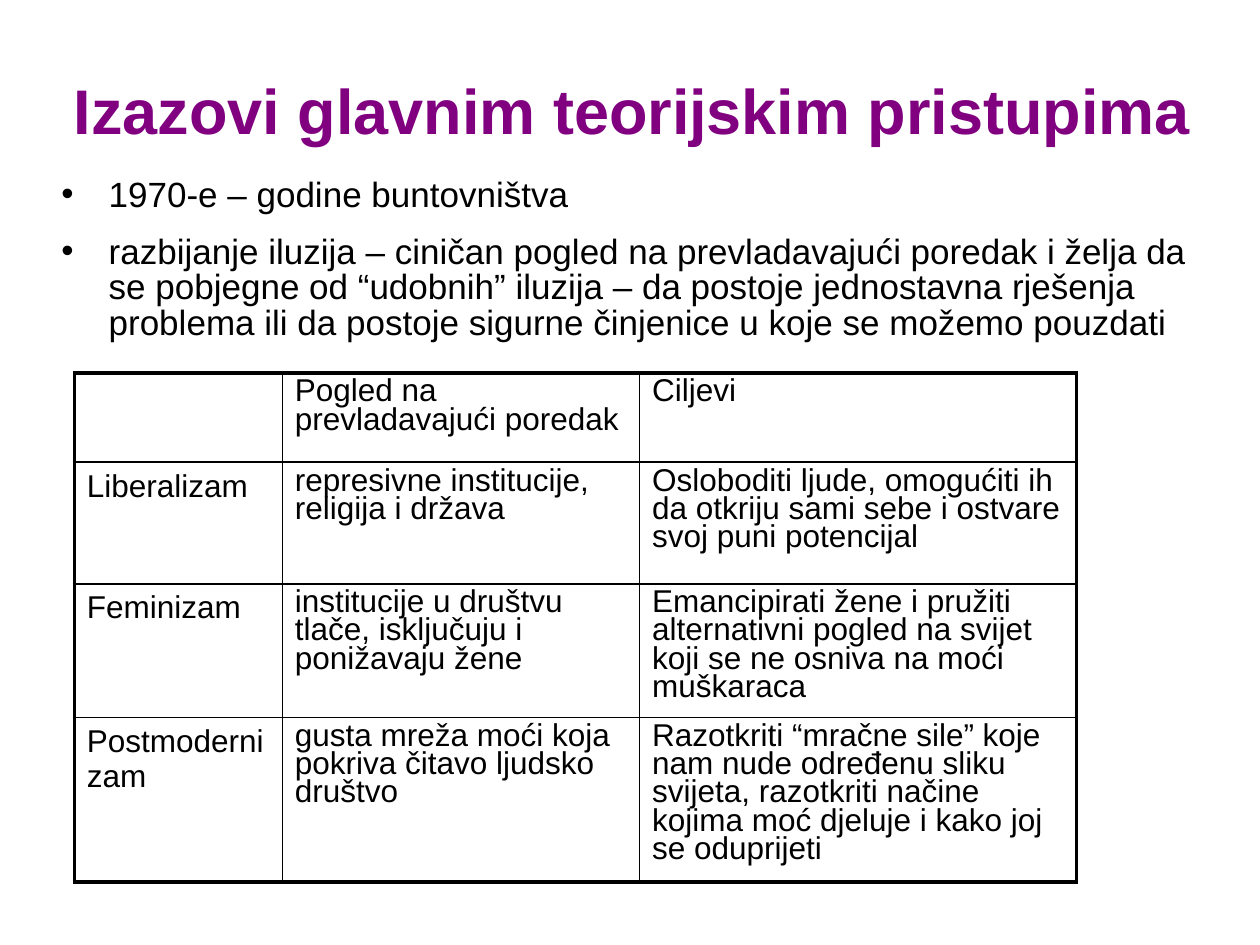
from lxml import etree
from pptx import Presentation
from pptx.dml.color import RGBColor
from pptx.enum.text import MSO_AUTO_SIZE, PP_ALIGN
from pptx.oxml.ns import qn
from pptx.util import Pt

CENTER = PP_ALIGN.CENTER
GROW = MSO_AUTO_SIZE.SHAPE_TO_FIT_TEXT
FONT = "Arial"
COLORS = {"title": "800080", "text": "000000", "border": "000000"}
THIN, THICK = 1, 2.25
INDENT = 27

TITLE = "Izazovi glavnim teorijskim pristupima"
BULLETS = [
    "1970-e – godine buntovništva",
    "razbijanje iluzija – ciničan pogled na prevladavajući poredak i želja da "
    "se pobjegne od “udobnih” iluzija – da postoje jednostavna rješenja "
    "problema ili da postoje sigurne činjenice u koje se možemo pouzdati",
]
COLUMN_WIDTHS = [118.8, 204.2, 249.6]
ROW_HEIGHTS = [51, 69.5, 76, 94]
ROWS = [
    ["", "Pogled na prevladavajući poredak", "Ciljevi"],
    ["Liberalizam", "represivne institucije, religija i država",
     "Osloboditi ljude, omogućiti ih da otkriju sami sebe i ostvare svoj puni potencijal"],
    ["Feminizam", "institucije u društvu tlače, isključuju i ponižavaju žene",
     "Emancipirati žene i pružiti alternativni pogled na svijet koji se ne osniva "
     "na moći muškaraca"],
    ["Postmodernizam", "gusta mreža moći koja pokriva čitavo ljudsko društvo",
     "Razotkriti “mračne sile” koje nam nude određenu sliku svijeta, razotkriti "
     "načine kojima moć djeluje i kako joj se oduprijeti"],
]


def style_font(font, size, color, bold=False):
    font.name = FONT
    font.size = Pt(size)
    font.bold = bold
    font.color.rgb = RGBColor.from_string(COLORS[color])


def format_paragraph(para, size, color, after, bold=False, bullet=False):
    properties = para._p.get_or_add_pPr()
    properties.set("marL", str(Pt(INDENT)))
    properties.set("indent", str(-Pt(INDENT)))
    para.line_spacing = 0.85
    para.space_after = Pt(after)
    if bullet:
        etree.SubElement(properties, qn("a:buFont"), typeface=FONT)
        etree.SubElement(properties, qn("a:buChar"), char="•")
    for span in para.runs:
        style_font(span.font, size, color, bold)


def add_heading_and_bullets(page):
    box = page.shapes.add_textbox(Pt(28), Pt(39.6), Pt(666.7), Pt(155.5))
    frame = box.text_frame
    frame.word_wrap = True
    frame.auto_size = GROW
    frame.margin_top = Pt(8)
    frame.text = "\n".join([TITLE, *BULLETS])
    title, *bullets = frame.paragraphs
    title.alignment = CENTER
    format_paragraph(title, 36, "title", after=18, bold=True)
    for para in bullets:
        format_paragraph(para, 20, "text", after=12, bullet=True)


def set_borders(cell, widths):
    """Widths are given for the left, right, top and bottom sides."""
    properties = cell._tc.get_or_add_tcPr()
    for position, (side, width) in enumerate(zip("LRTB", widths)):
        line = etree.Element(qn(f"a:ln{side}"), w=str(Pt(width)))
        fill = etree.SubElement(line, qn("a:solidFill"))
        etree.SubElement(fill, qn("a:srgbClr"), val=COLORS["border"])
        properties.insert(position, line)


def add_theory_table(page):
    row_count, column_count = len(ROWS), len(COLUMN_WIDTHS)
    table = page.shapes.add_table(
        row_count, column_count, Pt(42.5), Pt(213.1),
        Pt(sum(COLUMN_WIDTHS)), Pt(sum(ROW_HEIGHTS))).table
    table.first_row = table.horz_banding = False
    for column, width in zip(table.columns, COLUMN_WIDTHS):
        column.width = Pt(width)
    for r, (row, height) in enumerate(zip(table.rows, ROW_HEIGHTS)):
        row.height = Pt(height)
        for c, cell in enumerate(row.cells):
            cell.text = ROWS[r][c]
            cell.fill.background()
            para = cell.text_frame.paragraphs[0]
            if c > 0:
                para.line_spacing = 0.8
            style_font(para.font, 18, "text")
            for span in para.runs:
                style_font(span.font, 18, "text")
            # The outer frame is thick, the inner grid thin
            outer = (c == 0, c == column_count - 1, r == 0, r == row_count - 1)
            set_borders(cell, [THICK if edge else THIN for edge in outer])


def main():
    deck = Presentation()
    deck.slide_width, deck.slide_height = Pt(720), Pt(540)
    page = deck.slides.add_slide(deck.slide_layouts[6])
    add_heading_and_bullets(page)
    add_theory_table(page)
    deck.save("out.pptx")


if __name__ == "__main__":
    main()
